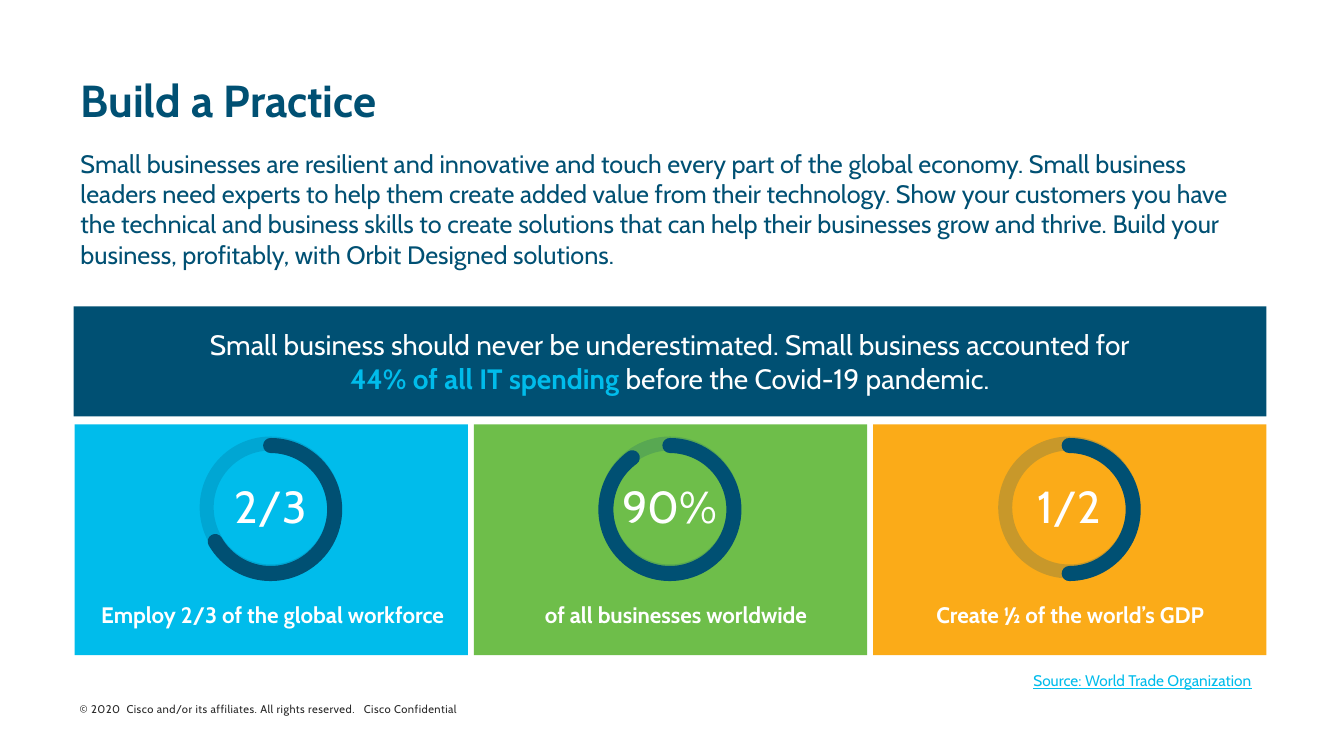
"""Build the "Build a Practice" slide with three small-business statistics."""
from lxml import etree
from pptx import Presentation
from pptx.dml.color import RGBColor
from pptx.enum.shapes import MSO_SHAPE
from pptx.enum.text import MSO_ANCHOR, MSO_AUTO_SIZE, PP_ALIGN
from pptx.oxml.ns import qn
from pptx.util import Pt

RECTANGLE, OVAL, ARC = MSO_SHAPE.RECTANGLE, MSO_SHAPE.OVAL, MSO_SHAPE.ARC
LEFT, CENTER = PP_ALIGN.LEFT, PP_ALIGN.CENTER
TOP, MIDDLE, BOTTOM = MSO_ANCHOR.TOP, MSO_ANCHOR.MIDDLE, MSO_ANCHOR.BOTTOM
NO_FIT = MSO_AUTO_SIZE.NONE
PX = 9144


class Theme:
    font = "Cabin"
    navy, cyan, green, amber, white, ink = map(
        RGBColor.from_string,
        ["005073", "00BCEB", "6EBE4A", "FBAB18", "FFFFFF", "282828"])
    title, body, banner, value, label, source, legal = 32, 18, 20, 32, 16, 11, 8


def write(text, box=None, holder=None, size=Theme.body, color=Theme.navy,
          bold=False, underline=False, align=LEFT, anchor=TOP, spacing=None,
          margins=(10, 5), tracking=0, accent=""):
    """Write lines of text in a holder or new text box, with an accented phrase."""
    holder = holder or slide.shapes.add_textbox(*[n * PX for n in box])
    frame = holder.text_frame
    frame.word_wrap = True
    frame.auto_size = NO_FIT
    frame.vertical_anchor = anchor
    frame.margin_left = frame.margin_right = margins[0] * PX
    frame.margin_top = frame.margin_bottom = margins[1] * PX
    for index, line in enumerate(text.split("\n")):
        paragraph = frame.add_paragraph() if index else frame.paragraphs[0]
        paragraph.alignment = align
        paragraph.line_spacing = spacing
        pieces = [line]
        if accent and accent in line:
            pieces = line.partition(accent)
        for piece in filter(None, pieces):
            run = paragraph.add_run()
            run.text = piece
            run.font.name = Theme.font
            run.font.size = Pt(size)
            run.font.bold = bold or piece == accent
            run.font.underline = underline
            run.font.color.rgb = Theme.cyan if piece == accent else color
            if tracking:
                run._r.get_or_add_rPr().set("spc", str(tracking))


def draw(kind, box, fill=None, line_width=None):
    """Draw a filled shape, or an outlined one when a line width is given."""
    shape = slide.shapes.add_shape(kind, *[n * PX for n in box])
    shape.shadow.inherit = False
    if fill is None:
        shape.fill.background()
    else:
        shape.fill.solid()
        shape.fill.fore_color.rgb = fill
    if line_width is None:
        shape.line.fill.background()
    else:
        shape.line.color.rgb = Theme.navy
        shape.line.width = Pt(line_width)
    return shape


presentation = Presentation()
presentation.slide_width = 1333 * PX
presentation.slide_height = 750 * PX
slide = presentation.slides.add_slide(presentation.slide_layouts[5])

title = slide.shapes.title
title.left, title.top, title.width, title.height = [
    n * PX for n in (70, 50, 1217, 107)]
write("Build a Practice", holder=title, size=Theme.title, bold=True,
      anchor=MIDDLE, spacing=0.8)

write("Small businesses are resilient and innovative and touch every part of the "
      "global economy. Small business leaders need experts to help them create "
      "added value from their technology. Show your customers you have the "
      "technical and business skills to create solutions that can help their "
      "businesses grow and thrive. Build your business, profitably, with Orbit "
      "Designed solutions.", (70, 142, 1190, 162))

draw(RECTANGLE, (73, 304, 1183, 109), Theme.navy)
write("Small business should never be underestimated. Small business accounted for\n"
      "44% of all IT spending before the Covid-19 pandemic.",
      (72, 317, 1185, 83), size=Theme.banner, color=Theme.white, align=CENTER,
      anchor=MIDDLE, accent="44% of all IT spending")

statistics = [
    ("2/3", 2 / 3, "Employ 2/3 of the global workforce", Theme.cyan, 84),
    ("90%", 0.9, "of all businesses worldwide", Theme.green, 484),
    ("1/2", 0.5, "Create ½ of the world’s GDP", Theme.amber, 875),
]
tile_left, tile_pitch, tile_width, ring_size = 74, 396, 390, 127
for index, (value, share, label, color, label_left) in enumerate(statistics):
    left = tile_left + index * tile_pitch
    ring_left = left + (tile_width - ring_size) // 2
    draw(RECTANGLE, (left, 421, tile_width, 229), color)

    track = draw(OVAL, (ring_left, 440, ring_size, ring_size), line_width=10)
    track_color = track.line._ln.find(".//" + qn("a:srgbClr"))
    etree.SubElement(track_color, qn("a:alpha"), val="20000")

    progress = draw(ARC, (ring_left, 442, ring_size, ring_size), line_width=10.75)
    progress.line._ln.set("cap", "rnd")
    progress.adjustments[0] = 270 * 0.6
    progress.adjustments[1] = (270 + 360 * share) % 360 * 0.6

    write(value, (ring_left, 470, ring_size, 64), size=Theme.value,
          color=Theme.white, align=CENTER, anchor=MIDDLE, margins=(0, 5))
    write(label, (label_left, 585, 373, 49), size=Theme.label,
          color=Theme.white, bold=True, align=CENTER, anchor=MIDDLE)

write("Source: World Trade Organization", (1015, 661, 296, 30),
      size=Theme.source, color=Theme.cyan, underline=True)
write("© 2020  Cisco and/or its affiliates. All rights reserved.   Cisco Confidential",
      (70, 691, 496, 23), size=Theme.legal, color=Theme.ink, anchor=BOTTOM,
      margins=(9, 4), tracking=30)

presentation.save("out.pptx")
